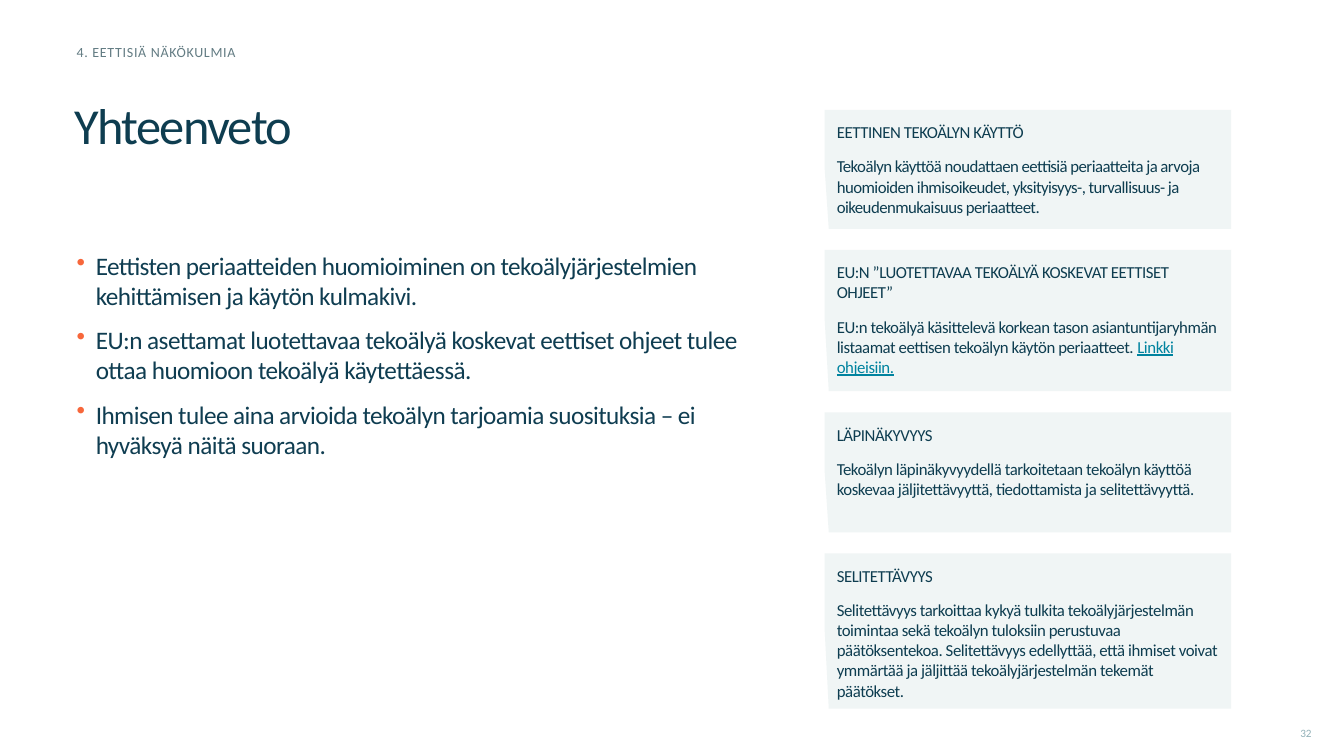
from lxml.etree import SubElement
from pptx import Presentation
from pptx.dml.color import RGBColor
from pptx.enum.text import MSO_ANCHOR as Anchor, MSO_AUTO_SIZE as AutoSize, PP_ALIGN as Align
from pptx.oxml.ns import qn
from pptx.util import Inches, Pt

WIDTH, HEIGHT = 13.33, 7.5
NAVY, LINK, PALE, ORANGE = "0E3D50", "00839F", "F0F5F5", "F7673B"

TITLE = "Yhteenveto"
SECTION = "4. EETTISIÄ NÄKÖKULMIA"
PAGE_NUMBER = "32"
POINTS = [
    "Eettisten periaatteiden huomioiminen on tekoälyjärjestelmien kehittämisen ja käytön kulmakivi.",
    "EU:n asettamat luotettavaa tekoälyä koskevat eettiset ohjeet tulee ottaa huomioon tekoälyä käytettäessä.",
    "Ihmisen tulee aina arvioida tekoälyn tarjoamia suosituksia – ei hyväksyä näitä suoraan.",
]
CARDS = [
    (1.18, -0.4, "EETTINEN TEKOÄLYN KÄYTTÖ",
     "Tekoälyn käyttöä noudattaen eettisiä periaatteita ja arvoja huomioiden ihmisoikeudet, "
     "yksityisyys-, turvallisuus- ja oikeudenmukaisuus periaatteet.", ""),
    (1.4, -0.3, "EU:N ”LUOTETTAVAA TEKOÄLYÄ KOSKEVAT EETTISET OHJEET”",
     "EU:n tekoälyä käsittelevä korkean tason asiantuntijaryhmän listaamat eettisen tekoälyn "
     "käytön periaatteet. ", "Linkki ohjeisiin."),
    (1.19, -0.3, "LÄPINÄKYVYYS",
     "Tekoälyn läpinäkyvyydellä tarkoitetaan tekoälyn käyttöä koskevaa jäljitettävyyttä, "
     "tiedottamista ja selitettävyyttä.", ""),
    (1.54, -0.3, "SELITETTÄVYYS",
     "Selitettävyys tarkoittaa kykyä tulkita tekoälyjärjestelmän toimintaa sekä tekoälyn "
     "tuloksiin perustuvaa päätöksentekoa. Selitettävyys edellyttää, että ihmiset voivat "
     "ymmärtää ja jäljittää tekoälyjärjestelmän tekemät päätökset.", ""),
]
CARD_LEFT, CARD_TOP, CARD_WIDTH, CARD_GAP = 8.18, 1.09, 4.03, 0.21
CARD_OUTLINE = [(0.01, 1), (0, 0.5), (0, 0), (1, 0), (1, 0.5), (1, 1)]


def rgb(value):
    return RGBColor.from_string(value)


def prepare(frame, inset=0, anchor=Anchor.TOP):
    frame.word_wrap = True
    frame.auto_size = AutoSize.NONE
    frame.vertical_anchor = anchor
    frame.margin_left = frame.margin_top = frame.margin_right = frame.margin_bottom = Inches(inset)
    return frame


def add_span(para, text, size, color=NAVY, spacing=0, underline=None):
    span = para.add_run()
    span.text = text
    span.font.name = "Calibri"
    span.font.size = Pt(size)
    span.font.color.rgb = rgb(color)
    span.font.underline = underline
    span._r.get_or_add_rPr().set("spc", str(round(spacing * 100)))


def write(frame, text, first=True, align=Align.LEFT, line=1, bullet=False, **style):
    para = frame.paragraphs[0] if first else frame.add_paragraph()
    if bullet:
        properties = para._p.get_or_add_pPr()
        properties.set("marL", str(Inches(0.19)))
        properties.set("indent", str(-Inches(0.19)))
        SubElement(SubElement(properties, qn("a:buClr")), qn("a:srgbClr")).set("val", ORANGE)
        SubElement(properties, qn("a:buChar")).set("char", "•")
    para.alignment = align
    para.line_spacing = line
    para.space_before = Pt(0 if first else 10)
    add_span(para, text, **style)
    return para


def add_box(page, left, top, width, height, anchor=Anchor.TOP):
    box = page.shapes.add_textbox(Inches(left), Inches(top), Inches(width), Inches(height))
    return prepare(box.text_frame, anchor=anchor)


def add_card(page, top, height, spacing, heading, body, link):
    corners = [(Inches(CARD_LEFT + x * CARD_WIDTH), Inches(top + y * height)) for x, y in CARD_OUTLINE]
    builder = page.shapes.build_freeform(*corners[0])
    builder.add_line_segments(corners[1:], close=True)
    card = builder.convert_to_shape()
    card.shadow.inherit = False
    card.fill.solid()
    card.fill.fore_color.rgb = rgb(PALE)
    card.line.fill.background()
    frame = prepare(card.text_frame, inset=0.12)
    write(frame, heading, size=12, spacing=-0.3)
    para = write(frame, body, first=False, size=12, spacing=spacing)
    if link:
        add_span(para, link, 12, LINK, spacing, underline=True)


def main():
    deck = Presentation()
    deck.slide_width, deck.slide_height = Inches(WIDTH), Inches(HEIGHT)
    page = deck.slides.add_slide(deck.slide_layouts[5])

    title = page.shapes.title
    title.left, title.top, title.width, title.height = map(Inches, (0.74, 0.68, 7.91, 1.18))
    write(prepare(title.text_frame, anchor=Anchor.MIDDLE), TITLE, line=0.9, size=36, spacing=-1.2)

    section = add_box(page, 0.76, 0.37, 7.88, 0.29, Anchor.MIDDLE)
    write(section, SECTION, size=10, color="637C83", spacing=0.5)
    number = add_box(page, 12.57, 7.17, 0.44, 0.2, Anchor.MIDDLE)
    write(number, PAGE_NUMBER, align=Align.RIGHT, size=8, color="92B1B8")

    summary = add_box(page, 0.76, 2.48, 6.89, 4.37)
    for index, point in enumerate(POINTS):
        write(summary, point, first=index == 0, bullet=True, size=18, color="0F3D51", spacing=-0.4)

    top = CARD_TOP
    for height, *content in CARDS:
        add_card(page, top, height, *content)
        top += height + CARD_GAP

    deck.save("out.pptx")


if __name__ == "__main__":
    main()
